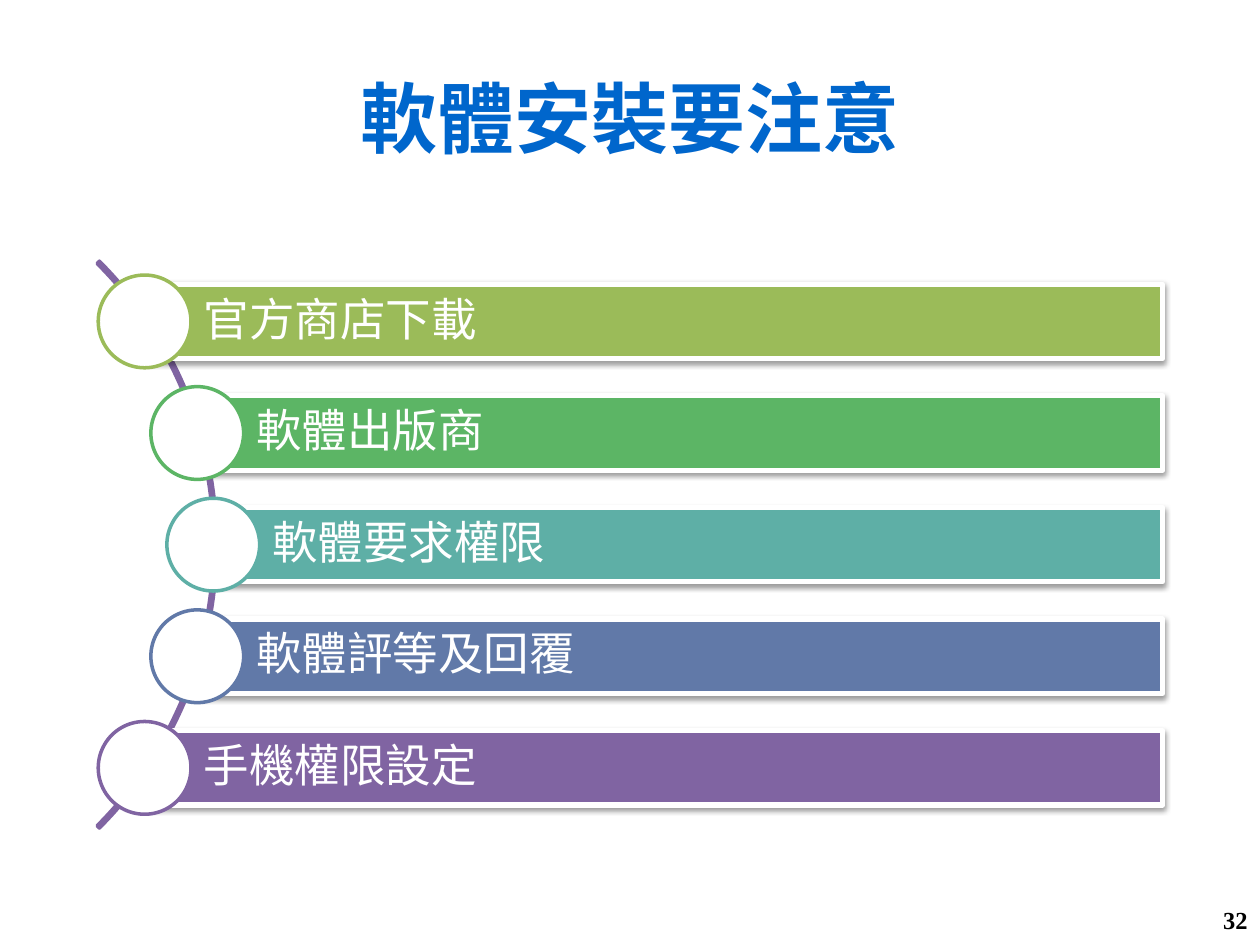
from math import sqrt

from lxml import etree
from pptx import Presentation
from pptx.dml.color import RGBColor
from pptx.enum.shapes import MSO_SHAPE
from pptx.enum.text import MSO_ANCHOR, PP_ALIGN
from pptx.oxml.ns import qn
from pptx.util import Cm, Pt

ARC, BAR, CIRCLE = MSO_SHAPE.BLOCK_ARC, MSO_SHAPE.RECTANGLE, MSO_SHAPE.OVAL
MIDDLE = MSO_ANCHOR.MIDDLE
LEFT, CENTER, RIGHT = PP_ALIGN.LEFT, PP_ALIGN.CENTER, PP_ALIGN.RIGHT

COLORS = {
    "title": "0066CC", "white": "FFFFFF", "black": "000000",
    "green": "9BBB59", "emerald": "5CB565", "teal": "5EAFA6",
    "blue": "6179A8", "purple": "8064A2",
}
TIPS = [
    ("官方商店下載", "green"),
    ("軟體出版商", "emerald"),
    ("軟體要求權限", "teal"),
    ("軟體評等及回覆", "blue"),
    ("手機權限設定", "purple"),
]
CENTER_X, CENTER_Y = -3.71, 10.98
ARC_RADIUS, CIRCLE_TRACK = 8.08, 8.01
PITCH, BAR_HEIGHT, BAR_RIGHT, DIAMETER = 2.25, 1.5, 23.44, 1.87


def write_text(shape, text, color, size, alignment, bold=False):
    frame = shape.text_frame
    frame.word_wrap = True
    frame.vertical_anchor = MIDDLE
    paragraph = frame.paragraphs[0]
    paragraph.text = text
    paragraph.alignment = alignment
    font_format = {"name": "Times New Roman", "size": Pt(size), "bold": bold}
    for attribute, value in font_format.items():
        setattr(paragraph.font, attribute, value)
    paragraph.font.color.rgb = RGBColor.from_string(COLORS[color])
    return paragraph


def add_outlined(kind, left, top, width, height, fill, line, weight):
    shape = slide.shapes.add_shape(kind, Cm(left), Cm(top), Cm(width), Cm(height))
    shape.shadow.inherit = False
    if fill:
        shape.fill.solid()
        shape.fill.fore_color.rgb = RGBColor.from_string(COLORS[fill])
    else:
        shape.fill.background()
    shape.line.color.rgb = RGBColor.from_string(COLORS[line])
    shape.line.width = Pt(weight)
    return shape


presentation = Presentation()
presentation.slide_width, presentation.slide_height = Cm(25.4), Cm(19.05)
slide = presentation.slides.add_slide(presentation.slide_layouts[5])

title = slide.shapes.title
title_place = {"left": Cm(1.27), "top": Cm(0.76), "width": Cm(22.86), "height": Cm(3.18)}
for attribute, value in title_place.items():
    setattr(title, attribute, value)
write_text(title, "軟體安裝要注意", "title", 44, CENTER, bold=True)

arc = add_outlined(ARC, CENTER_X - ARC_RADIUS, CENTER_Y - ARC_RADIUS,
                   2 * ARC_RADIUS, 2 * ARC_RADIUS, None, "purple", 2)
for index, value in enumerate((189, 27, 0.004)):
    arc.adjustments[index] = value

for index, (tip, color) in enumerate(TIPS):
    offset = (index - 2) * PITCH
    middle_y = CENTER_Y + offset
    bar_left = CENTER_X + sqrt(CIRCLE_TRACK ** 2 - offset ** 2)
    bar = add_outlined(BAR, bar_left, middle_y - BAR_HEIGHT / 2,
                       BAR_RIGHT - bar_left, BAR_HEIGHT, color, "white", 3)
    effects = bar._element.spPr.find(qn("a:effectLst"))
    shadow = etree.SubElement(effects, qn("a:outerShdw"), blurRad=str(Pt(3.1)),
                              dist=str(Pt(1.6)), dir="5400000", rotWithShape="0")
    shade = etree.SubElement(shadow, qn("a:srgbClr"), val=COLORS["black"])
    etree.SubElement(shade, qn("a:alpha"), val="38000")

    paragraph = write_text(bar, tip, "white", 26, LEFT)
    paragraph.line_spacing = 0.9
    margins = {"margin_left": 1.19, "margin_top": 0.18,
               "margin_right": 0.18, "margin_bottom": 0.18}
    for attribute, value in margins.items():
        setattr(bar.text_frame, attribute, Cm(value))

    add_outlined(CIRCLE, bar_left - DIAMETER / 2, middle_y - DIAMETER / 2,
                 DIAMETER, DIAMETER, "white", color, 2)

page_number = slide.shapes.add_textbox(Cm(19.48), Cm(18.03), Cm(5.92), Cm(1.02))
write_text(page_number, "32", "black", 14, RIGHT, bold=True)

presentation.save("out.pptx")
